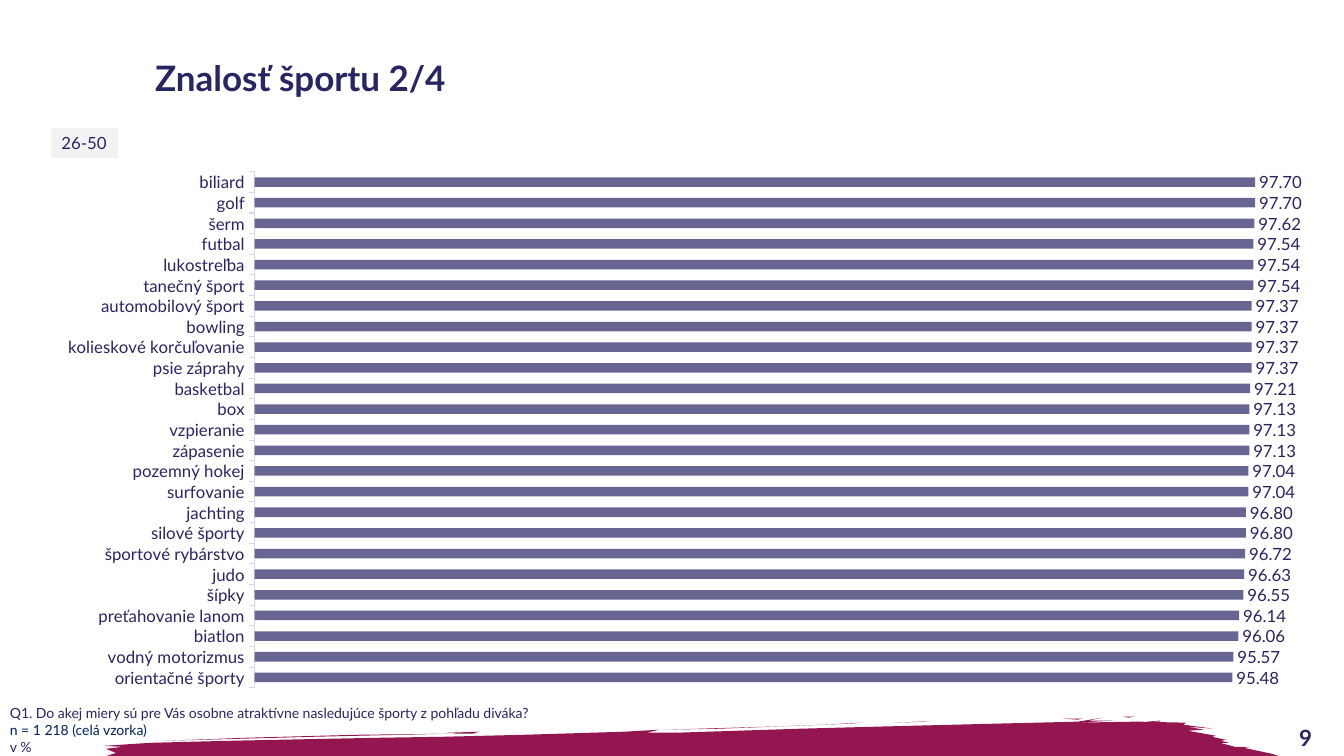
from lxml import etree
from pptx import Presentation
from pptx.chart.data import CategoryChartData
from pptx.dml.color import RGBColor
from pptx.enum.chart import XL_CHART_TYPE, XL_LABEL_POSITION, XL_TICK_MARK
from pptx.enum.shapes import MSO_SHAPE
from pptx.enum.text import MSO_ANCHOR, MSO_AUTO_SIZE, PP_ALIGN
from pptx.oxml import parse_xml
from pptx.oxml.ns import nsdecls, qn
from pptx.util import Inches, Pt

BAR_CLUSTERED = XL_CHART_TYPE.BAR_CLUSTERED
OUTSIDE_END = XL_LABEL_POSITION.OUTSIDE_END
TICK_OUT, TICK_NONE = XL_TICK_MARK.OUTSIDE, XL_TICK_MARK.NONE
RECTANGLE = MSO_SHAPE.RECTANGLE
TOP, MIDDLE = MSO_ANCHOR.TOP, MSO_ANCHOR.MIDDLE
LEFT, CENTER = PP_ALIGN.LEFT, PP_ALIGN.CENTER
NO_FIT, GROW = MSO_AUTO_SIZE.NONE, MSO_AUTO_SIZE.SHAPE_TO_FIT_TEXT

INDIGO = RGBColor(0x28, 0x25, 0x64)
INDIGO_DARK = RGBColor(0x28, 0x24, 0x63)
NAVY = RGBColor(0x00, 0x20, 0x60)
LAVENDER = RGBColor(0xD7, 0xD6, 0xF0)
PALE_GREY = RGBColor(0xF2, 0xF2, 0xF2)
CRIMSON = RGBColor(0x94, 0x16, 0x51)

FONT = "Lato"
SLIDE_WIDTH, SLIDE_HEIGHT = Inches(13.33), Inches(7.5)

SPORTS = {
    "biliard": 97.7, "golf": 97.7, "šerm": 97.62, "futbal": 97.54,
    "lukostreľba": 97.54, "tanečný šport": 97.54, "automobilový šport": 97.37,
    "bowling": 97.37, "kolieskové korčuľovanie": 97.37, "psie záprahy": 97.37,
    "basketbal": 97.21, "box": 97.13, "vzpieranie": 97.13, "zápasenie": 97.13,
    "pozemný hokej": 97.04, "surfovanie": 97.04, "jachting": 96.8,
    "silové športy": 96.8, "športové rybárstvo": 96.72, "judo": 96.63,
    "šípky": 96.55, "preťahovanie lanom": 96.14, "biatlon": 96.06,
    "vodný motorizmus": 95.57, "orientačné športy": 95.48,
}

# Brush stroke: body first, then loose bristle streaks, in inches
BRUSH_CONTOURS = [
    [(0.84, 7.52), (1.06, 7.5), (1.15, 7.47), (1.05, 7.43), (1.21, 7.41),
     (1.03, 7.4), (1.49, 7.37), (2.26, 7.35), (3.74, 7.32), (4.4, 7.31),
     (5.2, 7.29), (6.19, 7.26), (6.54, 7.24), (6.41, 7.27), (6.7, 7.27),
     (7.94, 7.23), (8.69, 7.21), (9.87, 7.18), (10.29, 7.17), (10.69, 7.16),
     (10.94, 7.12), (10.79, 7.15), (11.05, 7.15), (10.66, 7.17),
     (11.28, 7.16), (11.76, 7.17), (11.74, 7.19), (12.03, 7.23),
     (11.78, 7.21), (11.94, 7.24), (11.78, 7.25), (12.06, 7.3), (12.02, 7.31),
     (12.16, 7.34), (12.11, 7.35), (12.19, 7.37), (12.1, 7.37), (12.25, 7.41),
     (12.4, 7.41), (12.34, 7.42), (12.62, 7.48), (12.68, 7.5), (12.55, 7.53),
     (12.35, 7.54), (12.61, 7.57), (12.37, 7.6), (12.43, 7.64), (11.83, 7.66),
     (11.53, 7.69), (10.14, 7.71), (9.2, 7.74), (8.28, 7.77), (7.24, 7.8),
     (5.64, 7.84), (4.04, 7.87), (2.77, 7.87), (1.79, 7.86), (1.64, 7.78),
     (1.35, 7.76), (1.3, 7.65), (1.13, 7.61), (1.15, 7.55)],
    [(1.63, 7.35), (2.43, 7.32), (3.54, 7.29), (4.45, 7.28), (3.11, 7.31)],
    [(4.44, 7.27), (4.75, 7.26), (4.69, 7.28), (4.54, 7.28)],
    [(6.6, 7.24), (7.95, 7.2), (8.56, 7.17), (8.43, 7.18), (7.14, 7.23)],
    [(8.87, 7.17), (9.14, 7.16), (9.23, 7.16)],
    [(10.54, 7.13), (10.73, 7.13), (10.69, 7.14)],
    [(11.14, 7.11), (11.26, 7.11), (11.19, 7.12)],
    [(11.38, 7.16), (11.51, 7.15), (11.5, 7.16)],
]


def box(left, top, width, height):
    """Turn percentages of the slide into lengths."""
    sides = (SLIDE_WIDTH, SLIDE_HEIGHT) * 2
    return [int(side * share / 100)
            for side, share in zip(sides, (left, top, width, height))]


def format_font(font, size, color, bold=False):
    values = {"name": FONT, "size": Pt(size), "bold": bold}
    for name, value in values.items():
        setattr(font, name, value)
    font.color.rgb = color


def fill_text(shape, lines, size, bold=False, align=LEFT, **frame_format):
    """Write (text, color) lines, one paragraph each."""
    frame = shape.text_frame
    for name, value in frame_format.items():
        setattr(frame, name, value)
    frame.text = "\n".join(text for text, _ in lines)
    for paragraph, (_, color) in zip(frame.paragraphs, lines):
        paragraph.alignment = align
        format_font(paragraph.runs[0].font, size, color, bold)


def set_title(slide, text):
    title = slide.shapes.title
    title.left, title.top, title.width, title.height = box(10.8, 3.73, 73.37, 13.87)
    fill_text(title, [(text, INDIGO)], 25, bold=True, word_wrap=True,
              vertical_anchor=MIDDLE, auto_size=NO_FIT)
    title.text_frame.paragraphs[0].line_spacing = 0.9


def add_label(slide, place, lines, size, **text_format):
    fill_text(slide.shapes.add_textbox(*place), lines, size, **text_format)


def add_tag(slide, place, text):
    tag = slide.shapes.add_shape(RECTANGLE, *place)
    tag.shadow.inherit = False
    tag.fill.solid()
    tag.fill.fore_color.rgb = PALE_GREY
    tag.line.fill.background()
    fill_text(tag, [(text, INDIGO_DARK)], 12, word_wrap=False,
              vertical_anchor=TOP, auto_size=GROW)


def set_plot_area(chart, left, top, width, height):
    """Fix the inner plot area as shares of the chart."""
    parts = {"layoutTarget": "inner", "xMode": "edge", "yMode": "edge",
             "x": left, "y": top, "w": width, "h": height}
    inside = "".join(f'<c:{name} val="{value}"/>' for name, value in parts.items())
    layout = parse_xml(f'<c:layout {nsdecls("c")}><c:manualLayout>{inside}'
                       '</c:manualLayout></c:layout>')
    plot_area = chart.plots[0]._element.getparent()
    for old_layout in plot_area.findall(qn("c:layout")):
        plot_area.remove(old_layout)
    plot_area.insert(0, layout)


def add_bar_chart(slide, place, values):
    data = CategoryChartData(number_format="0.00")
    data.categories = list(values)
    data.add_series("Series 1", list(values.values()))
    chart = slide.shapes.add_chart(BAR_CLUSTERED, *place, data).chart
    chart.has_legend = chart.has_title = False
    format_font(chart.font, 12, INDIGO)
    set_plot_area(chart, 0.168, 0.012, 0.803, 0.966)

    # Axes
    sports_axis, percent_axis = chart.category_axis, chart.value_axis
    sports_axis.reverse_order = True
    sports_axis.major_tick_mark = TICK_OUT
    sports_axis.minor_tick_mark = TICK_NONE
    sports_axis.format.line.color.rgb = LAVENDER
    sports_axis.format.line.width = Pt(0.75)
    format_font(sports_axis.tick_labels.font, 12, INDIGO)
    percent_axis.minimum_scale, percent_axis.maximum_scale = 0, 100
    percent_axis.has_major_gridlines = percent_axis.visible = False

    # Bars at 70 % opacity
    plot = chart.plots[0]
    plot.gap_width, plot.overlap, plot.vary_by_categories = 117, 100, False
    series = plot.series[0]
    series.format.fill.solid()
    series.format.fill.fore_color.rgb = INDIGO
    color = series._element.find(".//" + qn("a:srgbClr"))
    etree.SubElement(color, qn("a:alpha"), val="70000")

    # Value labels
    labels = series.data_labels
    label_format = {"show_value": True, "position": OUTSIDE_END,
                    "number_format": "#,##0.00", "number_format_is_linked": False}
    for name, value in label_format.items():
        setattr(labels, name, value)
    format_font(labels.font, 12, INDIGO_DARK)


def add_brush(slide, contours):
    # The builder keeps whole units only, so draw in hundredths of an inch
    outlines = [[(round(x * 100), round(y * 100)) for x, y in contour]
                for contour in contours]
    builder = slide.shapes.build_freeform(*outlines[0][0], scale=Inches(0.01))
    for outline in outlines:
        builder.move_to(*outline[0])
        builder.add_line_segments(outline[1:], close=True)
    brush = builder.convert_to_shape()
    brush.shadow.inherit = False
    brush.fill.solid()
    brush.fill.fore_color.rgb = CRIMSON
    brush.line.fill.background()


def main():
    presentation = Presentation()
    presentation.slide_width, presentation.slide_height = SLIDE_WIDTH, SLIDE_HEIGHT
    slide = presentation.slides.add_slide(presentation.slide_layouts[5])

    set_title(slide, "Znalosť športu 2/4")
    add_label(slide, box(94.22, 95.2, 5.85, 4.8), [("9", INDIGO_DARK)], 16,
              bold=True, align=CENTER, word_wrap=True, vertical_anchor=MIDDLE)
    add_bar_chart(slide, box(3, 21.87, 94.9, 70.67), SPORTS)
    add_brush(slide, BRUSH_CONTOURS)
    question = "Q1. Do akej miery sú pre Vás osobne atraktívne nasledujúce športy z pohľadu diváka?"
    add_label(slide, box(0, 92.53, 40.06, 8.13),
              [(question, INDIGO), ("n = 1 218 (celá vzorka)", NAVY), ("v %", INDIGO)],
              10, word_wrap=False, auto_size=GROW)
    add_tag(slide, box(3.83, 16.93, 4.95, 4), "26-50")

    presentation.save("out.pptx")


if __name__ == "__main__":
    main()
